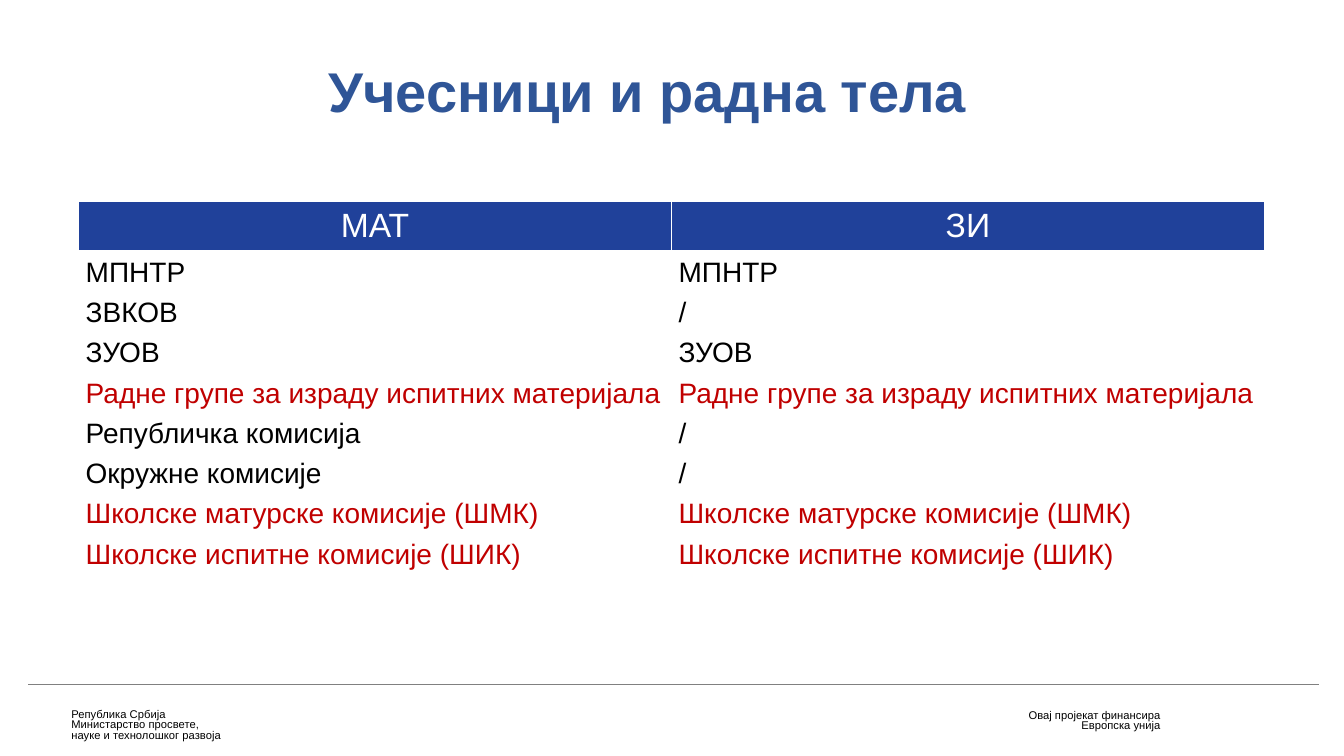
import pptx
import pptx.util
import pptx.dml.color
import pptx.enum.shapes
import pptx.enum.text
import pptx.oxml
import pptx.oxml.ns

Inches = pptx.util.Inches
Pt = pptx.util.Pt
ALIGN = pptx.enum.text.PP_ALIGN
ANCHOR = pptx.enum.text.MSO_ANCHOR

COLORS = {
    "title": "2F5597",
    "header": "20419A",
    "white": "FFFFFF",
    "black": "000000",
    "red": "C00000",
    "rule": "808080",
}


def rgb(name):
    return pptx.dml.color.RGBColor.from_string(COLORS[name])


def write_paragraph(para, text, size, color, paragraph_format, bold=False):
    span = para.add_run()
    span.text = text
    for name, value in {"name": "Arial", "size": Pt(size), "bold": bold}.items():
        setattr(span.font, name, value)
    span.font.color.rgb = rgb(color)
    for name, value in paragraph_format.items():
        setattr(para, name, value)


deck = pptx.Presentation()
deck.slide_width = Inches(13.33)
deck.slide_height = Inches(7.5)
page = deck.slides.add_slide(deck.slide_layouts[5])

footers = [
    (0.61, 6.99, 1.7, 0.42, ALIGN.LEFT,
     ["Република Србија", "Министарство просвете,", "науке и технолошког развоја"]),
    (10.08, 7, 1.53, 0.32, ALIGN.RIGHT,
     ["Овај пројекат финансира", "Европска унија"]),
]
for left, top, width, height, alignment, lines in footers:
    box = page.shapes.add_textbox(Inches(left), Inches(top), Inches(width), Inches(height))
    box.text_frame.word_wrap = False
    for index, line in enumerate(lines):
        para = box.text_frame.add_paragraph() if index else box.text_frame.paragraphs[0]
        write_paragraph(para, line, 8, "black", {"alignment": alignment, "line_spacing": 0.8})

rule = page.shapes.add_connector(
    pptx.enum.shapes.MSO_CONNECTOR.STRAIGHT,
    Inches(0.28), Inches(6.79), Inches(13.08), Inches(6.79))
rule.line.color.rgb = rgb("rule")
rule.line.width = Pt(1)
pptx.oxml.ns.qn("a:effectLst")
rule._element.spPr.append(
    pptx.oxml.parse_xml(f'<a:effectLst {pptx.oxml.ns.nsdecls("a")}/>'))

title = page.shapes.title
title_place = {"left": 0.67, "top": 0.21, "width": 11.5, "height": 1.45}
for name, value in title_place.items():
    setattr(title, name, Inches(value))
title.text_frame.vertical_anchor = ANCHOR.MIDDLE
title.text_frame.word_wrap = True
write_paragraph(title.text_frame.paragraphs[0], "Учесници и радна тела", 40, "title",
                {"alignment": ALIGN.CENTER, "line_spacing": 0.9}, bold=True)

materials = "Радне групе за израду испитних материјала"
matura = "Школске матурске комисије (ШМК)"
exam = "Школске испитне комисије (ШИК)"
rows = [
    ("МАТ", "ЗИ", "white"),
    ("МПНТР", "МПНТР", "black"),
    ("ЗВКОВ", "/", "black"),
    ("ЗУОВ", "ЗУОВ", "black"),
    (materials, materials, "red"),
    ("Републичка комисија", "/", "black"),
    ("Окружне комисије", "/", "black"),
    (matura, matura, "red"),
    (exam, exam, "red"),
]
table = page.shapes.add_table(
    len(rows), 2, Inches(0.78), Inches(2), Inches(11.76), Inches(3.7)).table
table.horz_banding = False
for column in table.columns:
    column.width = Inches(5.88)

cell_margins = {"margin_left": 0.07, "margin_top": 0, "margin_right": 0.07, "margin_bottom": 0}
for row_index, (*texts, color) in enumerate(rows):
    is_header = row_index == 0
    table.rows[row_index].height = Inches(0.5 if is_header else 0.4)
    for column_index, text in enumerate(texts):
        cell = table.cell(row_index, column_index)
        for name, value in cell_margins.items():
            setattr(cell, name, Inches(value))
        properties = cell._tc.get_or_add_tcPr()
        for side in ("L", "R", "T", "B"):
            thick = (is_header and side == "B") or (row_index == 1 and side == "T")
            properties.append(pptx.oxml.parse_xml(
                f'<a:ln{side} {pptx.oxml.ns.nsdecls("a")} w="{Pt(3 if thick else 1)}">'
                f'<a:solidFill><a:srgbClr val="{COLORS["white"]}"/></a:solidFill></a:ln{side}>'))
        cell.fill.solid()
        cell.fill.fore_color.rgb = rgb("header" if is_header else "white")
        write_paragraph(cell.text_frame.paragraphs[0], text, 24 if is_header else 20, color, {
            "alignment": ALIGN.CENTER if is_header else ALIGN.LEFT,
            "line_spacing": 1.15,
            "space_after": Pt(3),
        })

deck.save("out.pptx")
